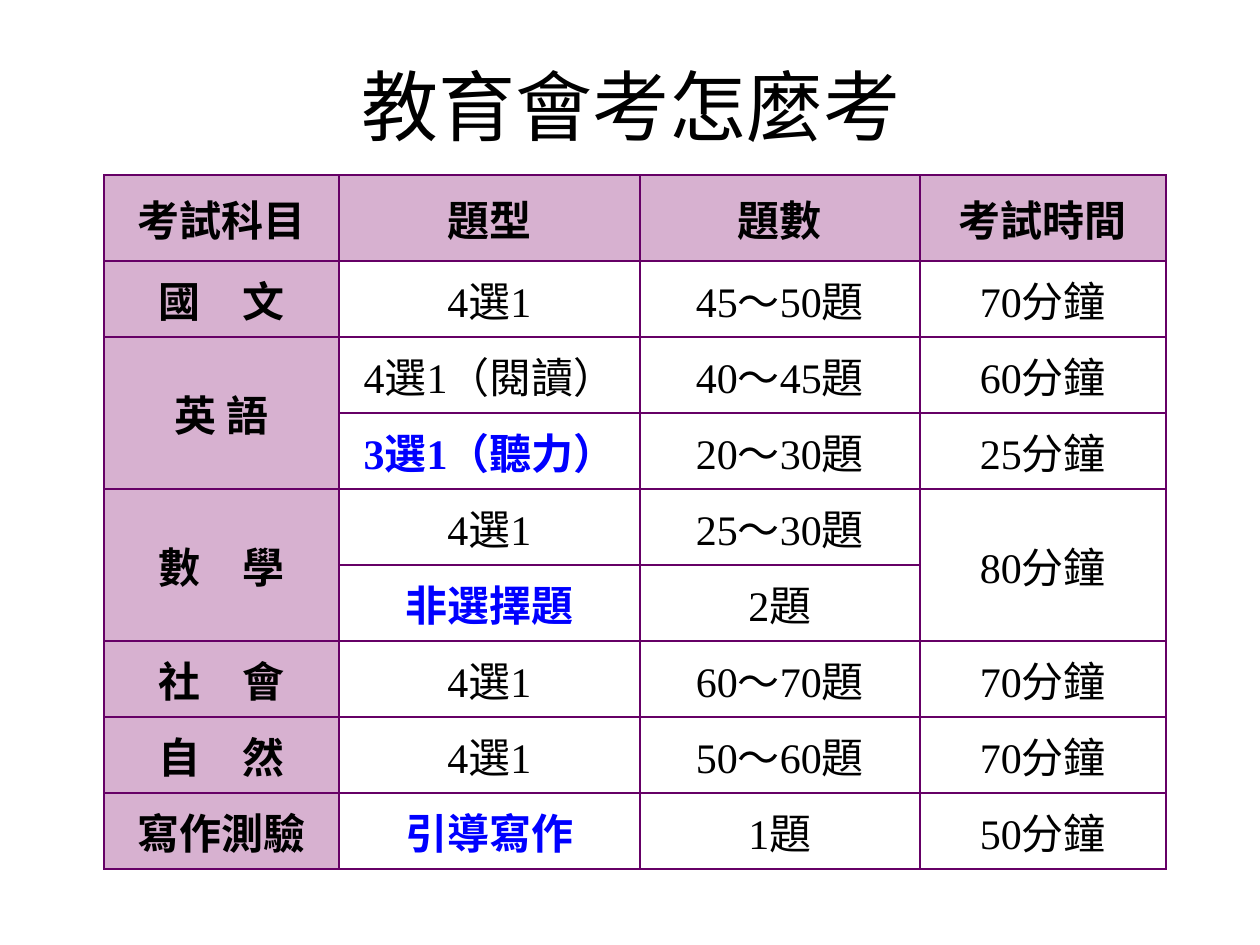
"""Build the slide that tabulates the exam subjects, question types, counts and times."""
from lxml import etree
from pptx import Presentation
from pptx import util as u
from pptx.dml.color import RGBColor
from pptx.enum import text
from pptx.oxml.ns import qn

SCALE = 914400 / 126
CJK_FONT = "Noto Sans CJK SC"
LATIN_FONT = "Times New Roman"
BLACK, BLUE, PURPLE, PINK = "000000", "0000FF", "660066", "D7B1D0"


def px(length):
    return u.Emu(round(length * SCALE))


def add_span(para, words, size, font_name, color, bold):
    para.alignment = text.PP_ALIGN.CENTER
    span = para.add_run()
    span.text = words
    span.font.size = u.Pt(size)
    span.font.bold = bold
    span.font.color.rgb = RGBColor.from_string(color)
    span.font.name = font_name
    etree.SubElement(span.font._element, qn("a:ea"), typeface=CJK_FONT)


deck = Presentation()
deck.slide_width, deck.slide_height = px(1260), px(945)
page = deck.slides.add_slide(deck.slide_layouts[5])

title = page.shapes.title
title.left, title.top, title.width, title.height = px(64), px(26), px(1134), px(158)
title.text_frame.vertical_anchor = text.MSO_ANCHOR.MIDDLE
add_span(title.text_frame.paragraphs[0], "教育會考怎麼考", 44, CJK_FONT, BLACK, False)

exam_rows = [
    ["考試科目", "題型", "題數", "考試時間"],
    ["國　文", "4選1", "45～50題", "70分鐘"],
    ["英 語", "4選1（閱讀）", "40～45題", "60分鐘"],
    ["", "3選1（聽力）", "20～30題", "25分鐘"],
    ["數　學", "4選1", "25～30題", "80分鐘"],
    ["", "非選擇題", "2題", ""],
    ["社　會", "4選1", "60～70題", "70分鐘"],
    ["自　然", "4選1", "50～60題", "70分鐘"],
    ["寫作測驗", "引導寫作", "1題", "50分鐘"],
]
highlights = {"3選1（聽力）", "非選擇題", "引導寫作"}
column_widths = [235, 301, 280, 246]
row_heights = [86] + [76] * 8

frame = page.shapes.add_table(
    len(row_heights), len(column_widths),
    px(104), px(175), px(sum(column_widths)), px(sum(row_heights)),
)
table = frame.table
for column, width in zip(table.columns, column_widths):
    column.width = px(width)
for row, height in zip(table.rows, row_heights):
    row.height = px(height)

for row_index, labels in enumerate(exam_rows):
    for column_index, label in enumerate(labels):
        cell = table.cell(row_index, column_index)
        is_header = row_index == 0 or column_index == 0
        is_highlight = label in highlights
        cell.vertical_anchor = text.MSO_ANCHOR.MIDDLE
        cell.margin_left = cell.margin_right = px(3)
        cell.margin_top = cell.margin_bottom = px(3)
        if is_header:
            cell.fill.solid()
            cell.fill.fore_color.rgb = RGBColor.from_string(PINK)
        else:
            cell.fill.background()
        properties = cell._tc.get_or_add_tcPr()
        for position, side in enumerate(("lnL", "lnR", "lnT", "lnB")):
            border = etree.Element(qn(f"a:{side}"), w=str(u.Pt(1)))
            border_fill = etree.SubElement(border, qn("a:solidFill"))
            etree.SubElement(border_fill, qn("a:srgbClr"), val=PURPLE)
            properties.insert(position, border)
        if label:
            add_span(
                cell.text_frame.paragraphs[0], label, 24,
                CJK_FONT if is_header else LATIN_FONT,
                BLUE if is_highlight else BLACK,
                is_header or is_highlight,
            )

for row_index, column_index in ((2, 0), (4, 0), (4, 3)):
    table.cell(row_index, column_index).merge(table.cell(row_index + 1, column_index))

deck.save("out.pptx")
